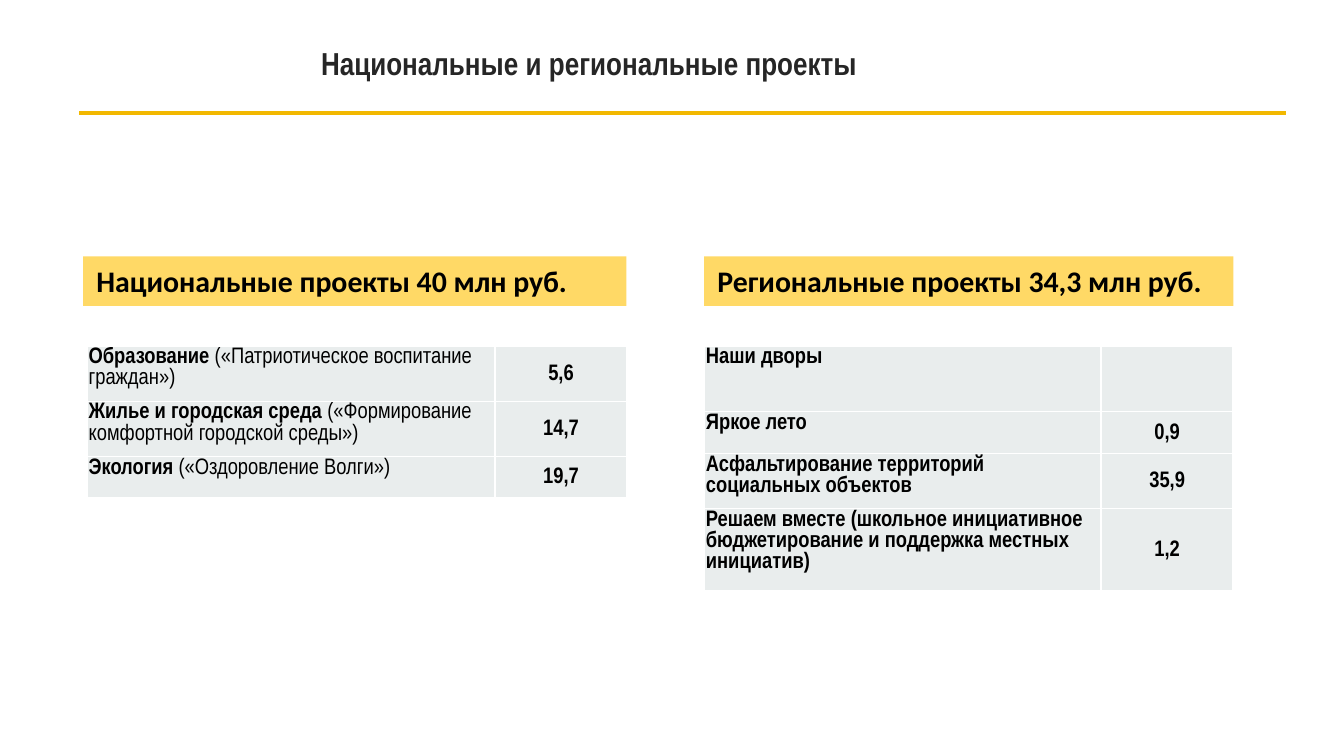
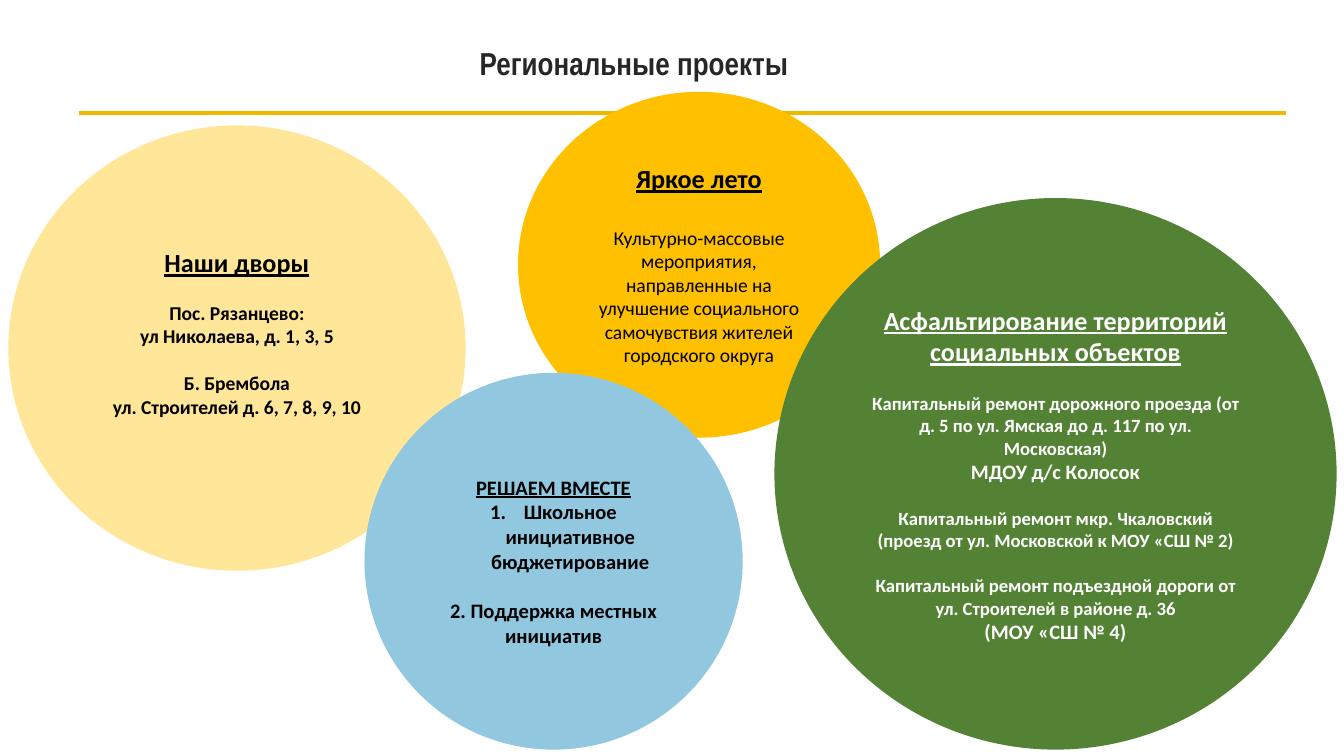
from lxml import etree
from pptx import Presentation
from pptx.dml.color import RGBColor
from pptx.enum import shapes, text
from pptx.oxml.ns import qn
from pptx.util import Pt

NARROW, CALIBRI = "Arial Narrow", "Calibri"
BLACK, WHITE, DARK = "000000", "FFFFFF", "262626"
RULE, BAND, CELL = "F2B800", "FFD966", "E9EDED"
CENTER, LEFT = text.PP_ALIGN.CENTER, text.PP_ALIGN.LEFT
MIDDLE, TOP = text.MSO_ANCHOR.MIDDLE, text.MSO_ANCHOR.TOP


def paint(color_format, hex_color):
    color_format.rgb = RGBColor.from_string(hex_color)


def write(frame, paragraphs, font, layout):
    for index, (runs, paragraph_format) in enumerate(paragraphs):
        paragraph = frame.paragraphs[0] if index == 0 else frame.add_paragraph()
        properties = paragraph._p.get_or_add_pPr()
        if paragraph_format.get("numbered"):
            properties.set("marL", str(Pt(18)))
            properties.set("indent", str(-Pt(18)))
            etree.SubElement(properties, qn("a:buAutoNum"), type="arabicPeriod")
        for name, value in {**layout, **paragraph_format}.items():
            if name != "numbered":
                setattr(paragraph, name, value)
        for words, changes in runs:
            run = paragraph.add_run()
            run.text = words
            for name, value in {**font, **changes}.items():
                if name == "color":
                    paint(run.font.color, value)
                else:
                    setattr(run.font, name, value)


deck = Presentation()
deck.slide_width, deck.slide_height = Pt(720), Pt(405)

title_font = {"name": NARROW, "size": Pt(17), "bold": True, "color": DARK}
pages = []
for title, left, width in [
    ("Национальные и региональные проекты", 167, 436),
    ("Региональные проекты", 252, 187),
]:
    page = deck.slides.add_slide(deck.slide_layouts[6])
    pages.append(page)
    heading = page.shapes.add_textbox(Pt(left), Pt(8.6), Pt(width), Pt(52.6)).text_frame
    heading_format = {
        "word_wrap": True, "vertical_anchor": MIDDLE,
        "margin_left": Pt(5), "margin_right": Pt(5),
        "margin_top": Pt(3), "margin_bottom": Pt(3),
    }
    for name, value in heading_format.items():
        setattr(heading, name, value)
    write(heading, [([(title, {})], {})], title_font, {"line_spacing": 0.9})
    rule = page.shapes.add_connector(
        shapes.MSO_CONNECTOR.STRAIGHT, Pt(42.5), Pt(60.5), Pt(689), Pt(60.5))
    paint(rule.line.color, RULE)
    rule.line.width = Pt(2.25)
    etree.SubElement(rule._element.spPr, qn("a:effectLst"))

summary, regional = pages

PLAIN = {"bold": False}
budgets = [
    ("Национальные проекты 40 млн руб.", 44.6, 291, 46.8, (218.4, 70.8), [
        (26, "Образование ", "(«Патриотическое воспитание граждан»)", "5,6"),
        (26, "Жилье и городская среда ", "(«Формирование комфортной городской среды»)", "14,7"),
        (22, "Экология ", "(«Оздоровление Волги»)", "19,7"),
    ]),
    ("Региональные проекты 34,3 млн руб.", 377.2, 283.5, 377.5, (212.4, 70.8), [
        (35, "Наши дворы", "", ""),
        (22.5, "Яркое лето", "", "0,9"),
        (23.5, "Асфальтирование территорий социальных объектов", "", "35,9"),
        (34, "Решаем вместе (школьное инициативное бюджетирование и поддержка местных инициатив)",
         "", "1,2"),
    ]),
]
band_font = {"name": CALIBRI, "size": Pt(16), "bold": True, "color": BLACK}
cell_font = {"name": NARROW, "size": Pt(12), "bold": True, "color": BLACK}
cell_margins = {"margin_left": Pt(0.7), "margin_right": Pt(0.7),
                "margin_top": Pt(0.7), "margin_bottom": Pt(0)}

for total, band_left, band_width, table_left, columns, projects in budgets:
    band = summary.shapes.add_shape(
        shapes.MSO_SHAPE.RECTANGLE, Pt(band_left), Pt(137.4), Pt(band_width), Pt(26.6))
    band.shadow.inherit = False
    band.fill.solid()
    paint(band.fill.fore_color, BAND)
    band.line.fill.background()
    band.text_frame.word_wrap = True
    band.text_frame.vertical_anchor = TOP
    write(band.text_frame, [([(total, {})], {})], band_font, {"alignment": LEFT})

    budget = summary.shapes.add_table(
        len(projects), 2, Pt(table_left), Pt(185.5), Pt(sum(columns)),
        Pt(sum(project[0] for project in projects))).table
    budget.first_row = budget.horz_banding = False
    for column, width in zip(budget.columns, columns):
        column.width = Pt(width)
    for row, (height, project, detail, amount) in zip(budget.rows, projects):
        row.height = Pt(height)
        project_runs = [(project, {})] + ([(detail, PLAIN)] if detail else [])
        amount_runs = [(amount, {})] if amount else []
        for cell, runs, alignment, anchor in zip(
                row.cells, (project_runs, amount_runs), (LEFT, CENTER), (TOP, MIDDLE)):
            cell.fill.solid()
            paint(cell.fill.fore_color, CELL)
            for name, value in {**cell_margins, "vertical_anchor": anchor}.items():
                setattr(cell, name, value)
            write(cell.text_frame, [(runs, {})], cell_font, {"alignment": alignment})

HEAD = {"size": Pt(14), "underline": True}
circles = [
    ((5, 67.7, 244, 237.6), "FFE699", BLACK, 10.5, TOP, 29.5, [
        ("Наши дворы", HEAD, 0),
        ("Пос. Рязанцево:", {}, 12.2),
        ("ул Николаева, д. 1, 3, 5", {}, 0),
        ("Б. Брембола", {}, 12.8),
        ("ул. Строителей д. 6, 7, 8, 9, 10", {}, 0),
    ]),
    ((278, 49.7, 193, 184.3), "FFC000", BLACK, 10.5, MIDDLE, 3.6, [
        ("Яркое лето", HEAD, 0),
        ("Культурно-массовые мероприятия, направленные на улучшение социального "
         "самочувствия жителей городского округа", PLAIN, 17),
    ]),
    ((195.8, 200.2, 201.6, 200.9), "91C7DF", BLACK, 11, MIDDLE, 3.6, [
        ("РЕШАЕМ ВМЕСТЕ", {"underline": True}, 0),
        ("Школьное инициативное бюджетирование", {}, 0),
        ("2. Поддержка местных инициатив", {}, 13.4),
    ]),
    ((415.4, 106.6, 300.2, 294.5), "548235", WHITE, 10, MIDDLE, 3.6, [
        ("Асфальтирование территорий социальных объектов", HEAD, 0),
        ("Капитальный ремонт дорожного проезда (от д. 5 по ул. Ямская до д. 117 "
         "по ул. Московская)", {}, 13.4),
        ("МДОУ д/с Колосок", {"size": Pt(11)}, 0),
        ("Капитальный ремонт мкр. Чкаловский (проезд от ул. Московской к МОУ «СШ № 2)", {}, 12.2),
        ("Капитальный ремонт подъездной дороги от", {}, 12.2),
        ("ул. Строителей в районе д. 36", {}, 0),
        ("(МОУ «СШ № 4)", {"size": Pt(11)}, 0),
    ]),
]
for place, fill, ink, size, anchor, top_margin, lines in circles:
    circle = regional.shapes.add_shape(shapes.MSO_SHAPE.OVAL, *map(Pt, place))
    circle.shadow.inherit = False
    circle.fill.solid()
    paint(circle.fill.fore_color, fill)
    paint(circle.line.color, fill)
    circle.line.width = Pt(1)
    circle_format = {"word_wrap": True, "vertical_anchor": anchor, "margin_top": Pt(top_margin)}
    for name, value in circle_format.items():
        setattr(circle.text_frame, name, value)
    paragraphs = []
    for words, changes, gap in lines:
        paragraph_format = {"space_before": Pt(gap)} if gap else {}
        paragraph_format["numbered"] = words.startswith("Школьное")
        paragraphs.append(([(words, changes)], paragraph_format))
    circle_font = {"name": CALIBRI, "size": Pt(size), "bold": True, "color": ink}
    write(circle.text_frame, paragraphs, circle_font, {"alignment": CENTER})

deck.save("out.pptx")
